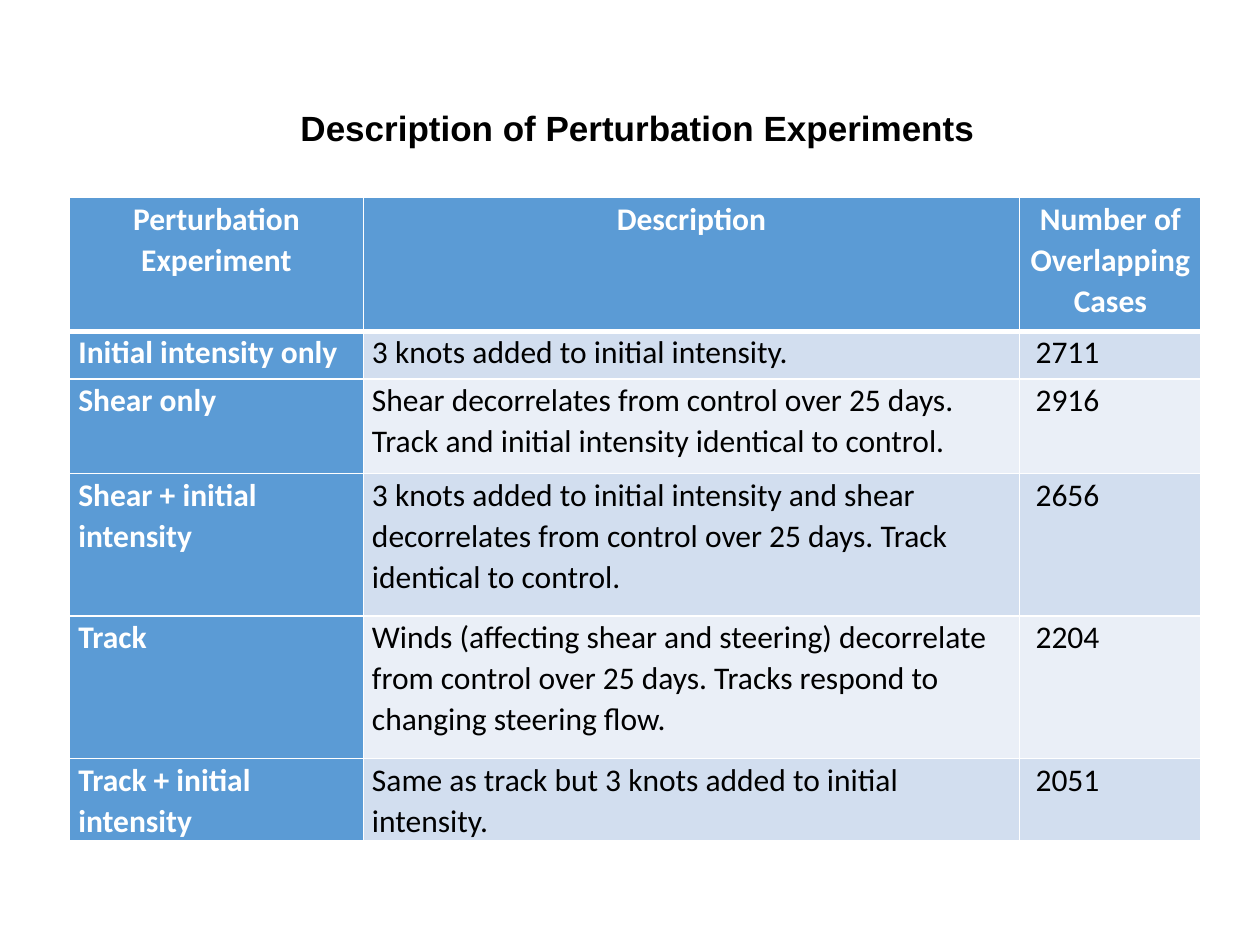
from lxml import etree
from pptx import Presentation
from pptx.dml.color import RGBColor
from pptx.enum.text import MSO_ANCHOR, MSO_AUTO_SIZE, PP_ALIGN
from pptx.oxml.ns import qn
from pptx.util import Pt

CENTER, LEFT = PP_ALIGN.CENTER, PP_ALIGN.LEFT
MIDDLE = MSO_ANCHOR.MIDDLE
NO_AUTOFIT = MSO_AUTO_SIZE.NONE

COLORS = {
    "white": "FFFFFF",
    "black": "000000",
    "header": "5B9BD5",
    "odd_band": "D2DEEF",
    "even_band": "EAEFF7",
}
TITLE = "Description of Perturbation Experiments"
EXPERIMENTS = [
    ("Perturbation Experiment", "Description", "Number of Overlapping Cases"),
    ("Initial intensity only", "3 knots added to initial intensity.", "2711"),
    ("Shear only",
     "Shear decorrelates from control over 25 days. "
     "Track and initial intensity identical to control.", "2916"),
    ("Shear + initial intensity",
     "3 knots added to initial intensity and shear decorrelates from control "
     "over 25 days. Track identical to control.", "2656"),
    ("Track",
     "Winds (affecting shear and steering) decorrelate from control "
     "over 25 days. Tracks respond to changing steering flow.", "2204"),
    ("Track + initial intensity",
     "Same as track but 3 knots added to initial intensity.", "2051"),
]
COLUMN_WIDTHS = (167.8, 375.1, 103.7)
ROW_HEIGHTS = (76.3, 27.4, 54, 81.4, 81.4, 45.3)
CASES_COLUMN = 2


def style_font(paragraph, name, size, color, bold):
    """Set the font shared by all runs of a paragraph."""
    font = paragraph.font
    font.name, font.size, font.bold = name, Pt(size), bold
    font.color.rgb = RGBColor.from_string(COLORS[color])


def add_title(slide, left, top, width, height):
    """Place the centred slide title in the given box."""
    title = slide.shapes.title
    title.left, title.top = Pt(left), Pt(top)
    title.width, title.height = Pt(width), Pt(height)
    frame = title.text_frame
    frame.text = TITLE
    frame.word_wrap = True
    frame.auto_size = NO_AUTOFIT
    frame.vertical_anchor = MIDDLE
    heading = frame.paragraphs[0]
    heading.alignment = CENTER
    style_font(heading, "Arial", 20, "black", True)


def set_borders(cell, widths):
    """Draw white cell borders from a mapping of side tag to width."""
    properties = cell._tc.get_or_add_tcPr()
    for side, width in widths.items():
        line = etree.SubElement(properties, qn(f"a:{side}"), w=str(Pt(width)))
        fill = etree.SubElement(line, qn("a:solidFill"))
        etree.SubElement(fill, qn("a:srgbClr"), val=COLORS["white"])


def fill_cell(cell, text, row, column):
    """Write and style one table cell according to its row and column."""
    is_header = row == 0
    is_label = is_header or column == 0
    band = "odd_band" if row % 2 else "even_band"
    set_borders(cell, {
        "lnL": 1,
        "lnR": 1,
        "lnT": 3 if row == 1 else 1,
        "lnB": 3 if is_header else 1,
    })
    cell.fill.solid()
    cell.fill.fore_color.rgb = RGBColor.from_string(
        COLORS["header" if is_label else band])
    is_count = column == CASES_COLUMN and not is_header
    cell.margin_left = Pt(9.1 if is_count else 5)
    cell.margin_right = Pt(5)
    cell.margin_top = cell.margin_bottom = Pt(0)
    cell.text = text
    paragraph = cell.text_frame.paragraphs[0]
    paragraph.alignment = CENTER if is_header else LEFT
    paragraph.line_spacing = 1.07
    style_font(paragraph, "Calibri", 18,
               "white" if is_label else "black", is_label)


def add_experiment_table(slide, left, top, width, height):
    """Place the table of perturbation experiments in the given box."""
    table = slide.shapes.add_table(
        len(EXPERIMENTS), len(COLUMN_WIDTHS),
        Pt(left), Pt(top), Pt(width), Pt(height)).table
    table.first_col = True
    for column, column_width in zip(table.columns, COLUMN_WIDTHS):
        column.width = Pt(column_width * width / sum(COLUMN_WIDTHS))
    for row, row_height in zip(table.rows, ROW_HEIGHTS):
        row.height = Pt(row_height * height / sum(ROW_HEIGHTS))
    for row, experiment in enumerate(EXPERIMENTS):
        for column, text in enumerate(experiment):
            fill_cell(table.cell(row, column), text, row, column)


def main():
    """Build the slide and save it."""
    presentation = Presentation()
    presentation.slide_width, presentation.slide_height = Pt(720), Pt(540)
    slide = presentation.slides.add_slide(presentation.slide_layouts[5])
    add_experiment_table(slide, 39.8, 113, 646.6, 365.8)
    add_title(slide, 42.5, 56.9, 643.7, 31.7)
    presentation.save("out.pptx")


if __name__ == "__main__":
    main()
